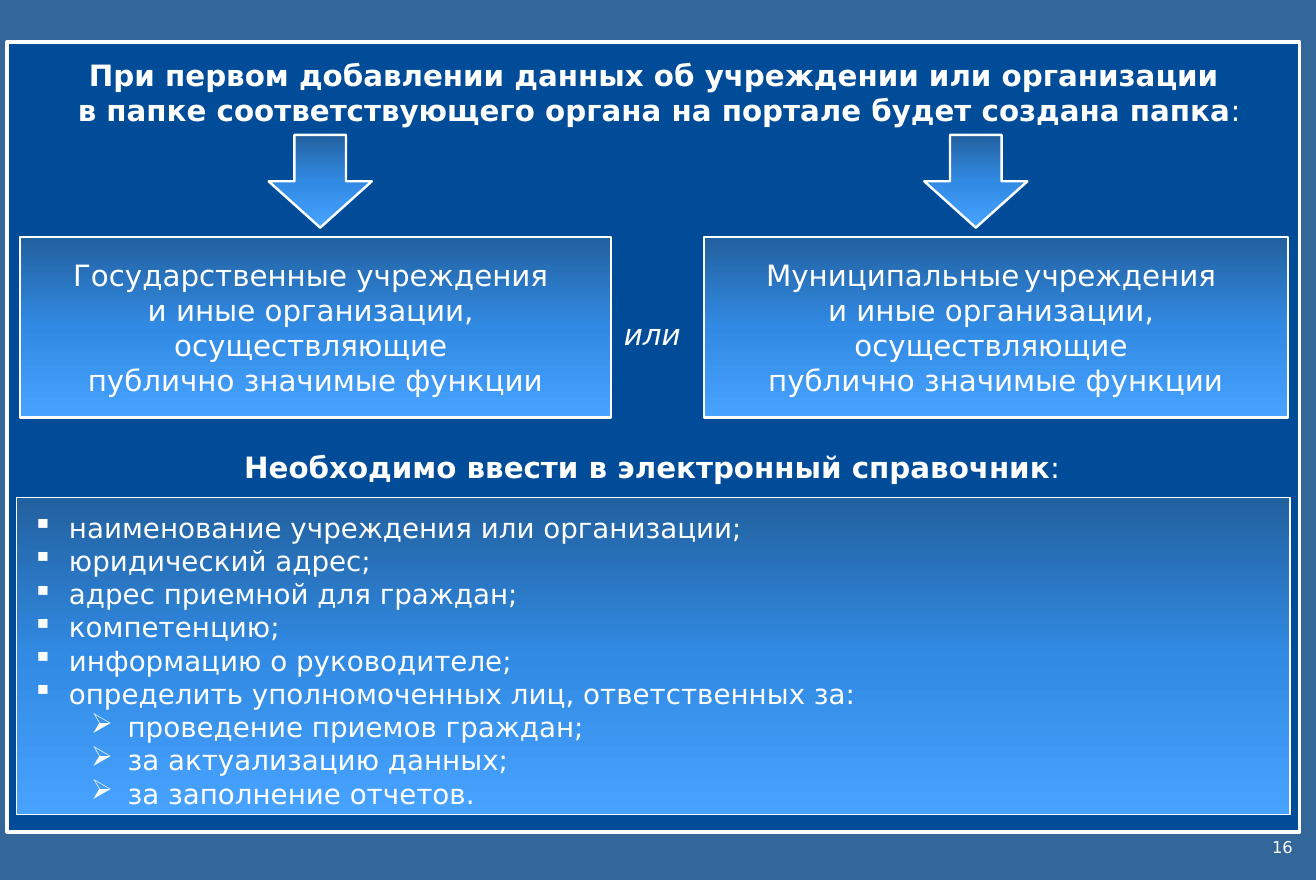
import copy

import lxml.etree
import pptx
import pptx.dml.color
import pptx.enum.shapes
import pptx.enum.text
import pptx.oxml.ns
import pptx.util

Inches = pptx.util.Inches
Pt = pptx.util.Pt
Shapes = pptx.enum.shapes.MSO_SHAPE
Align = pptx.enum.text.PP_ALIGN
qn = pptx.oxml.ns.qn

WHITE = pptx.dml.color.RGBColor(0xFF, 0xFF, 0xFF)
BACKGROUND = pptx.dml.color.RGBColor(0x33, 0x66, 0x99)
PANEL = pptx.dml.color.RGBColor(0x00, 0x4C, 0x99)
GRADIENT = [
    pptx.dml.color.RGBColor(0x22, 0x61, 0x9F),
    pptx.dml.color.RGBColor(0x31, 0x8A, 0xE3),
    pptx.dml.color.RGBColor(0x47, 0xA3, 0xFF),
]

presentation = pptx.Presentation()
presentation.slide_width = Inches(11.22)
presentation.slide_height = Inches(7.5)
slide = presentation.slides.add_slide(presentation.slide_layouts[6])
slide.background.fill.solid()
slide.background.fill.fore_color.rgb = BACKGROUND


def add_block(kind, left, top, width, height, line_width, gradient=True):
    shape = slide.shapes.add_shape(
        kind, Inches(left), Inches(top), Inches(width), Inches(height))
    shape.shadow.inherit = False
    shape.line.color.rgb = WHITE
    shape.line.width = Pt(line_width)
    if not gradient:
        shape.fill.solid()
        shape.fill.fore_color.rgb = PANEL
        return shape
    shape.fill.gradient()
    shape.fill.gradient_angle = 270
    stop_list = shape._element.spPr.find(qn("a:gradFill")).find(qn("a:gsLst"))
    stop_list.insert(1, copy.deepcopy(stop_list[0]))
    for index, stop in enumerate(shape.fill.gradient_stops):
        stop.position = index / 2
        stop.color.rgb = GRADIENT[index]
    return shape


def add_text(paragraph, text, size, bold=False, italic=False):
    for index, line in enumerate(text.split("\n")):
        if index:
            paragraph.add_line_break()
        run = paragraph.add_run()
        run.text = line
        run.font.name = "DejaVu Sans"
        run.font.size = Pt(size)
        run.font.bold = bold
        run.font.italic = italic
        run.font.color.rgb = WHITE


add_block(Shapes.RECTANGLE, 0.06, 0.36, 11.02, 6.73, 2.25, gradient=False)
add_block(Shapes.RECTANGLE, 0.14, 4.24, 10.86, 2.7, 0.75)

captions = [
    (0.15, 0.44, 10.94, 0.71, Align.CENTER, [
        ("При первом добавлении данных об учреждении или организации \n"
         "в папке соответствующего органа на портале будет создана папка",
         18, True, False),
        (":", 18, False, False)]),
    (0.14, 3.78, 10.84, 0.4, Align.CENTER, [
        ("Необходимо ввести в электронный справочник", 18, True, False),
        (":", 18, False, False)]),
    (5.22, 2.65, 0.78, 0.4, Align.LEFT, [("или", 18, False, True)]),
    (9, 7.09, 2.12, 0.28, Align.RIGHT, [("16", 10, False, False)]),
]
for left, top, width, height, alignment, runs in captions:
    caption = slide.shapes.add_textbox(
        Inches(left), Inches(top), Inches(width), Inches(height))
    caption.text_frame.word_wrap = True
    paragraph = caption.text_frame.paragraphs[0]
    paragraph.alignment = alignment
    for run_values in runs:
        add_text(paragraph, *run_values)

folder_ending = ("учреждения \nи иные организации, \nосуществляющие \n"
                 "публично значимые функции")
folders = [
    (0.17, 5.04, 2.29, [("Государственные " + folder_ending, 18)]),
    (6, 4.98, 7.88, [("Муниципальные", 18), (" ", 9), (folder_ending, 18)]),
]
for left, width, arrow_left, runs in folders:
    folder = add_block(Shapes.RECTANGLE, left, 2.02, width, 1.54, 1.5)
    folder.text_frame.word_wrap = False
    folder.text_frame.vertical_anchor = pptx.enum.text.MSO_ANCHOR.MIDDLE
    paragraph = folder.text_frame.paragraphs[0]
    paragraph.alignment = Align.CENTER
    for run_values in runs:
        add_text(paragraph, *run_values)
    add_block(Shapes.DOWN_ARROW, arrow_left, 1.15, 0.88, 0.79, 1.5)

directory_items = [
    (0, "наименование учреждения или организации;"),
    (0, "юридический адрес;"),
    (0, "адрес приемной для граждан;"),
    (0, "компетенцию;"),
    (0, "информацию о руководителе;"),
    (0, "определить уполномоченных лиц, ответственных за:"),
    (1, "проведение приемов граждан;"),
    (1, "за актуализацию данных;"),
    (1, "за заполнение отчетов."),
]
directory = slide.shapes.add_textbox(
    Inches(0.18), Inches(4.3), Inches(10.86), Inches(2.68))
directory.text_frame.word_wrap = True
for index, (level, item) in enumerate(directory_items):
    if index:
        paragraph = directory.text_frame.add_paragraph()
    else:
        paragraph = directory.text_frame.paragraphs[0]
    paragraph.level = level
    add_text(paragraph, item, 17)
    properties = paragraph._p.get_or_add_pPr()
    properties.set("marL", str(Inches(0.31 + 0.5 * level)))
    properties.set("indent", str(Inches(-0.31)))
    bullet = lxml.etree.SubElement(properties, qn("a:buChar"))
    bullet.set("char", "▪➢"[level])

presentation.save("out.pptx")
